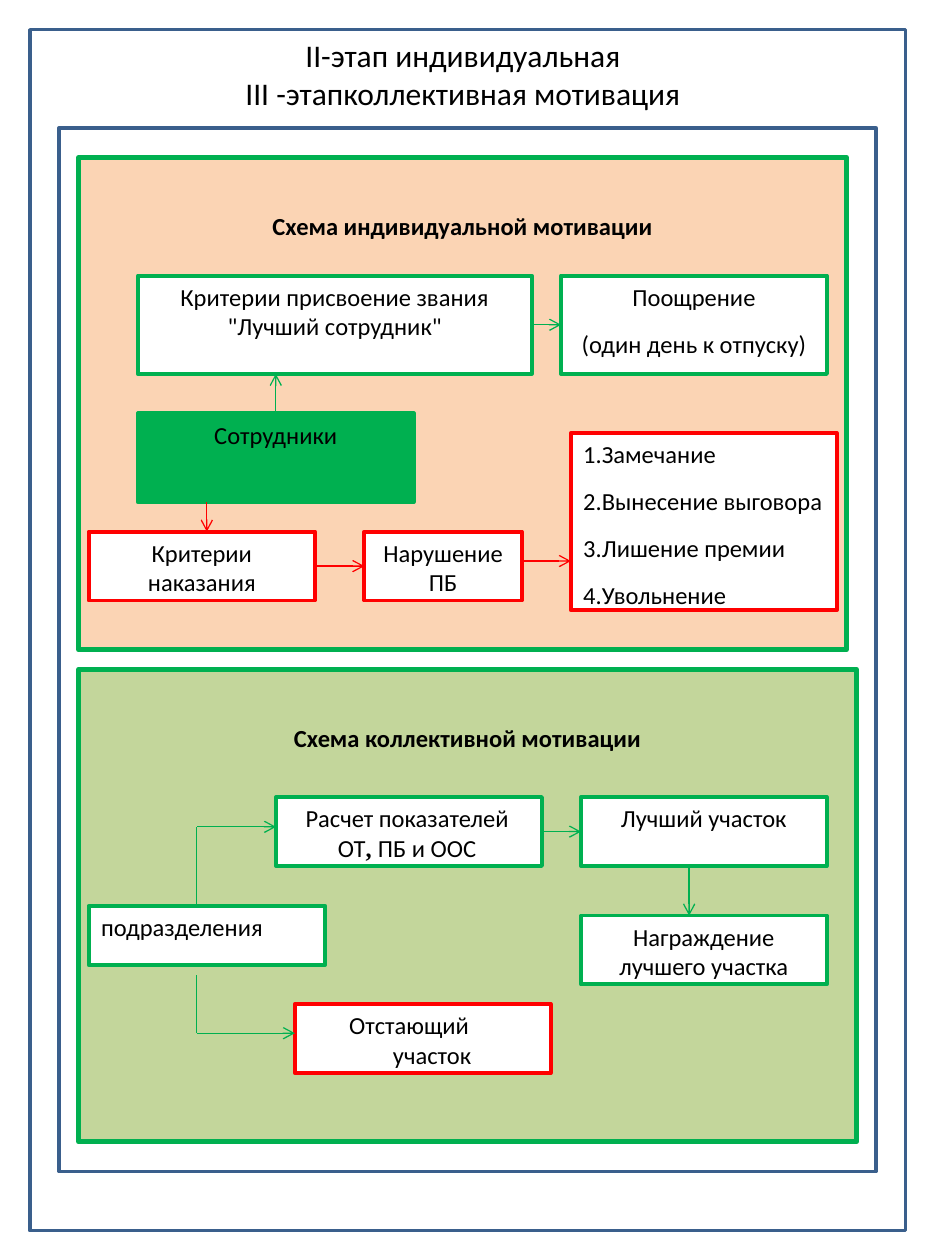
"""Build the slide of individual and collective motivation schemes."""
from dataclasses import dataclass
from typing import Optional

from lxml import etree
from pptx import Presentation
from pptx.dml.color import RGBColor
from pptx.enum.shapes import MSO_CONNECTOR, MSO_SHAPE
from pptx.enum.text import MSO_ANCHOR, MSO_AUTO_SIZE, PP_ALIGN
from pptx.oxml.ns import qn
from pptx.util import Pt

FONT = "Calibri"
GREEN, RED, BLUE = "00B050", "FF0000", "3A5F8C"
WHITE, BLACK, PEACH, OLIVE = "FFFFFF", "000000", "FBD4B4", "C3D69B"
TOP, LEFT, BOTTOM, RIGHT = range(4)


@dataclass
class Box:
    name: str
    left: float
    top: float
    width: float
    height: float
    text: str = ""
    line: str = GREEN
    fill: Optional[str] = WHITE
    weight: float = 2.25
    bold: bool = False
    align: PP_ALIGN = PP_ALIGN.CENTER
    inset_left: float = 7.2
    inset_right: float = 7.2
    inset_top: float = 3.6


@dataclass
class Arrow:
    start: tuple[float, float]
    end: tuple[float, float]
    color: str = GREEN
    head: bool = True
    begin: Optional[tuple[str, int]] = None
    finish: Optional[tuple[str, int]] = None


def panel(name: str, top: float, width: float, height: float, text: str, fill: str) -> Box:
    """Describe a coloured scheme panel with a bold heading."""
    return Box(name, 45, top, width, height, text, fill=fill, weight=3, bold=True, inset_top=30.7)


FRAMES = [
    Box("outer frame", 17, 17, 500.4, 686.2, line=BLUE, fill=None, weight=2),
    Box("inner frame", 33.8, 73.2, 466.8, 596.2, line=BLUE, fill=None, weight=2),
]

BOXES = [
    panel("individual", 90, 438.7, 281.3, "Схема индивидуальной мотивации", PEACH),
    Box("criteria", 78.8, 157.5, 225, 56.2, 'Критерии присвоение звания "Лучший сотрудник"'),
    Box("employees", 78.8, 236.2, 157.6, 50.7, "Сотрудники", fill=GREEN),
    Box("punishment", 50.7, 303.8, 129.3, 39.4, "Критерии наказания", RED),
    Box("reward", 320.6, 157.5, 152, 56.2, "Поощрение\n(один день к отпуску)"),
    Box("violation", 208.2, 303.8, 90, 39.4, "Нарушение ПБ", RED),
    Box("penalties", 326.2, 247.5, 152, 101.2,
        "1.Замечание\n2.Вынесение выговора\n3.Лишение премии\n4.Увольнение",
        RED, align=PP_ALIGN.LEFT, inset_right=3),
    panel("collective", 382.5, 444.4, 270, "Схема коллективной мотивации", OLIVE),
    Box("divisions", 50.7, 517.7, 135.1, 33.8, "подразделения", align=PP_ALIGN.LEFT),
    Box("indicators", 157.7, 455.5, 152, 39.4, "Расчет показателей ОТ",
        inset_left=9, inset_right=11),
    Box("best", 332, 455.5, 140.4, 39.4, "Лучший участок"),
    Box("award", 332, 523.2, 140.4, 39.4, "Награждение лучшего участка"),
    Box("lagging", 168.5, 573.8, 146.2, 39.4, "Отстающий участок", RED, align=PP_ALIGN.LEFT),
]

ARROWS = [
    Arrow((303.8, 185.6), (320.6, 185.6), begin=("criteria", RIGHT), finish=("reward", LEFT)),
    Arrow((118.2, 286.9), (118.2, 303.8), RED),
    Arrow((180, 323.5), (208.2, 323.5), RED,
          begin=("punishment", RIGHT), finish=("violation", LEFT)),
    Arrow((298.2, 320.6), (326.2, 320.6), RED),
    Arrow((157.6, 236.2), (157.6, 213.7), begin=("employees", TOP)),
    Arrow((112.5, 517.7), (112.5, 472.5), head=False),
    Arrow((112.5, 472.5), (157.7, 472.5)),
    Arrow((309.7, 475.2), (332, 475.2), begin=("indicators", RIGHT), finish=("best", LEFT)),
    Arrow((393.8, 494.9), (393.8, 523.2)),
    Arrow((112.5, 557.3), (112.5, 590.4), head=False),
    Arrow((112.5, 590.4), (168.5, 590.4)),
]


def paint(color_format, color: str) -> None:
    """Apply a hex colour to a colour format."""
    color_format.rgb = RGBColor.from_string(color)


def format_span(span, size: float, bold: bool = False, font: str = FONT) -> None:
    """Give a run its font, size, weight and black colour."""
    span.font.name, span.font.size, span.font.bold = font, Pt(size), bold
    paint(span.font.color, BLACK)


def draw_title(page, text: str) -> None:
    """Place and format the title placeholder in front of the frames."""
    title = page.shapes.title
    title.left, title.top, title.width, title.height = Pt(33.8), Pt(17), Pt(461.5), Pt(56)
    frame = title.text_frame
    frame.text = text
    frame.auto_size = MSO_AUTO_SIZE.NONE
    frame.vertical_anchor = MSO_ANCHOR.TOP
    for para in frame.paragraphs:
        para.alignment = PP_ALIGN.CENTER
        for span in para.runs:
            format_span(span, 18)
    title.element.getparent().append(title.element)


def draw_box(page, box: Box):
    """Draw a rectangle with its text and return the shape."""
    shape = page.shapes.add_shape(
        MSO_SHAPE.RECTANGLE, Pt(box.left), Pt(box.top), Pt(box.width), Pt(box.height))
    shape.shadow.inherit = False
    if box.fill:
        shape.fill.solid()
        paint(shape.fill.fore_color, box.fill)
    else:
        shape.fill.background()
    paint(shape.line.color, box.line)
    shape.line.width = Pt(box.weight)
    if box.text:
        frame = shape.text_frame
        frame.text = box.text
        frame.word_wrap = True
        frame.vertical_anchor = MSO_ANCHOR.TOP
        frame.margin_left, frame.margin_right = Pt(box.inset_left), Pt(box.inset_right)
        frame.margin_top = Pt(box.inset_top)
        for para in frame.paragraphs:
            para.alignment = box.align
            para.space_after = Pt(10)
            for span in para.runs:
                format_span(span, 14, box.bold)
    return shape


def draw_arrow(page, arrow: Arrow, shapes: dict) -> None:
    """Draw a thin line, joined to boxes where it meets their sides."""
    line = page.shapes.add_connector(
        MSO_CONNECTOR.STRAIGHT, *(Pt(value) for value in arrow.start + arrow.end))
    if arrow.begin:
        line.begin_connect(shapes[arrow.begin[0]], arrow.begin[1])
    if arrow.finish:
        line.end_connect(shapes[arrow.finish[0]], arrow.finish[1])
    paint(line.line.color, arrow.color)
    line.line.width = Pt(0.75)
    properties = line.element.spPr
    if arrow.head:
        etree.SubElement(properties.find(qn("a:ln")), qn("a:tailEnd"), type="arrow")
    etree.SubElement(properties, qn("a:effectLst"))


def main() -> None:
    """Build and save the deck."""
    deck = Presentation()
    deck.slide_width, deck.slide_height = Pt(540), Pt(720)
    page = deck.slides.add_slide(deck.slide_layouts[5])
    for frame in FRAMES:
        draw_box(page, frame)
    draw_title(page, "II-этап индивидуальная\nIII -этапколлективная мотивация")
    shapes = {box.name: draw_box(page, box) for box in BOXES}

    para = shapes["indicators"].text_frame.paragraphs[0]
    for text, font, bold in ((", ", "Times New Roman", True), ("ПБ и ООС", FONT, False)):
        span = para.add_run()
        span.text = text
        format_span(span, 14, bold, font)

    hanging = shapes["lagging"].text_frame.paragraphs[0]._p.get_or_add_pPr()
    hanging.set("marL", str(Pt(49)))
    hanging.set("indent", str(Pt(-25)))

    for arrow in ARROWS:
        draw_arrow(page, arrow, shapes)
    deck.save("out.pptx")


if __name__ == "__main__":
    main()
